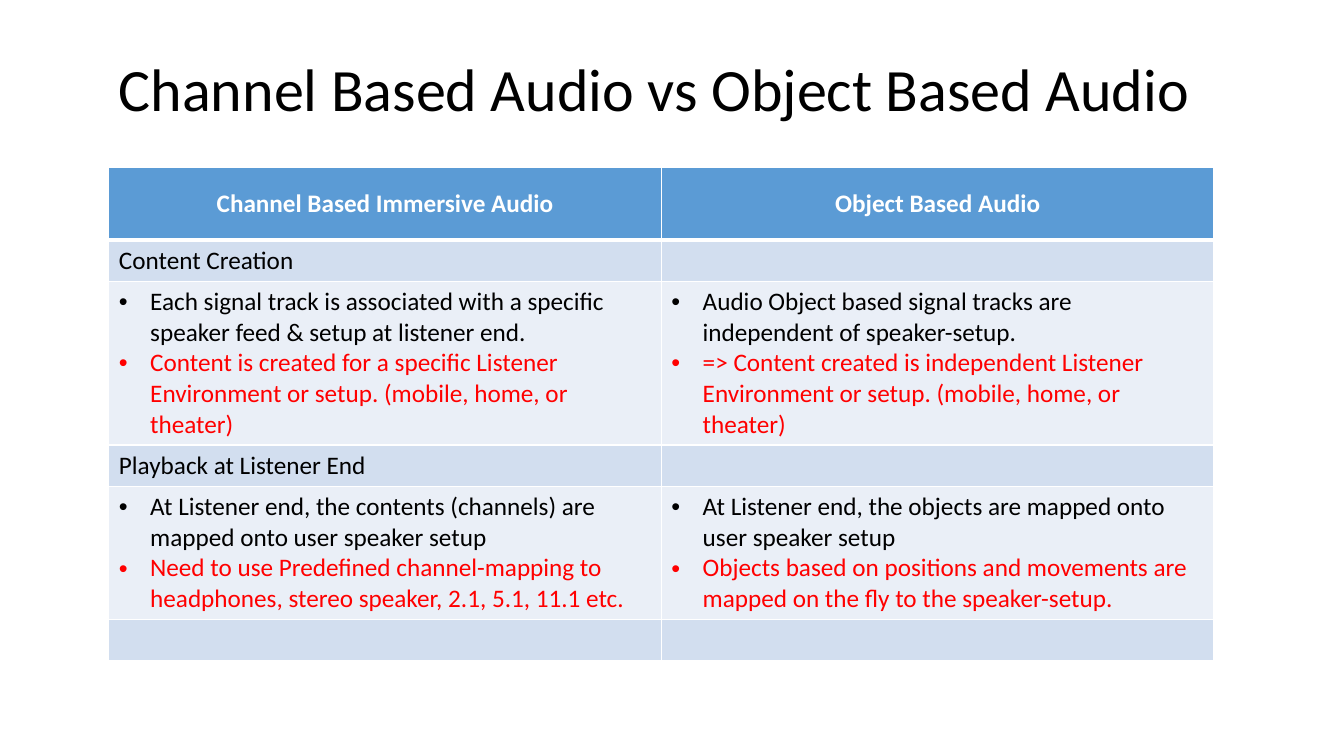
from lxml import etree
from pptx import Presentation
from pptx.dml.color import RGBColor
from pptx.enum.text import MSO_ANCHOR, PP_ALIGN
from pptx.oxml.ns import qn
from pptx.util import Inches, Pt

BLACK = RGBColor(0x00, 0x00, 0x00)
WHITE = RGBColor(0xFF, 0xFF, 0xFF)
RED = RGBColor(0xFF, 0x00, 0x00)
HEADER_BLUE = RGBColor(0x5B, 0x9B, 0xD5)
BAND_BLUE = RGBColor(0xD2, 0xDE, 0xEF)
PALE_BLUE = RGBColor(0xEA, 0xEF, 0xF7)
MIDDLE = MSO_ANCHOR.MIDDLE
CENTER = PP_ALIGN.CENTER
LEFT = PP_ALIGN.LEFT

SLIDE_WIDTH = 13.33
SLIDE_HEIGHT = 7.5
LEFT_MARGIN = 1.08 / SLIDE_WIDTH
HEADINGS = ["Channel Based Immersive Audio", "Object Based Audio"]
CREATION = [
    ["Each signal track is associated with a specific speaker feed & setup at listener end.",
     "Content is created for a specific Listener Environment or setup. (mobile, home, or theater)"],
    ["Audio Object based signal tracks are independent of speaker-setup.",
     "=> Content created is independent Listener Environment or setup. (mobile, home, or theater)"],
]
PLAYBACK = [
    ["At Listener end, the contents (channels) are mapped onto user speaker setup",
     "Need to use Predefined channel-mapping to headphones, stereo speaker, 2.1, 5.1, 11.1 etc."],
    ["At Listener end, the objects are mapped onto user speaker setup",
     "Objects based on positions and movements are mapped on the fly to the speaker-setup."],
]
ROWS = [
    ("header", 0.72, HEADINGS),
    ("band", 0.41, ["Content Creation", ""]),
    ("points", 1.62, CREATION),
    ("band", 0.41, ["Playback at Listener End", ""]),
    ("points", 1.32, PLAYBACK),
    ("band", 0.41, ["", ""]),
]
FILLS = {"header": HEADER_BLUE, "band": BAND_BLUE, "points": PALE_BLUE}


class SlideBuilder:
    """Holds the text style and the current slide, and places elements by shares of its size."""

    font_name = "Calibri"
    body_size = 18
    bullet_indent = 0.31

    def __init__(self, presentation):
        self.presentation = presentation
        self.slide = presentation.slides.add_slide(presentation.slide_layouts[6])

    def place(self, left, top, width, height):
        slide_width = self.presentation.slide_width
        slide_height = self.presentation.slide_height
        return (int(left * slide_width), int(top * slide_height),
                int(width * slide_width), int(height * slide_height))

    def style(self, paragraph, color, size=body_size, bold=False):
        for font in [paragraph.font] + [run.font for run in paragraph.runs]:
            font.name = self.font_name
            font.size = Pt(size)
            font.bold = bold
            font.color.rgb = color

    def title(self, text, size, *shares):
        shape = self.slide.shapes.add_textbox(*self.place(*shares))
        frame = shape.text_frame
        frame.word_wrap = True
        frame.vertical_anchor = MIDDLE
        frame.text = text
        paragraph = frame.paragraphs[0]
        paragraph.line_spacing = 0.8
        self.style(paragraph, BLACK, size)

    def bullet(self, paragraph):
        properties = paragraph._p.get_or_add_pPr()
        indent = Inches(self.bullet_indent)
        properties.set("marL", str(indent))
        properties.set("indent", str(-indent))
        etree.SubElement(properties, qn("a:buFont"), typeface="Arial")
        etree.SubElement(properties, qn("a:buChar"), char="•")

    def borders(self, cell, top, bottom):
        properties = cell._tc.get_or_add_tcPr()
        widths = [("a:lnL", 1), ("a:lnR", 1), ("a:lnT", top), ("a:lnB", bottom)]
        for position, (side, width) in enumerate(widths):
            line = etree.Element(qn(side), w=str(Pt(width)))
            fill = etree.SubElement(line, qn("a:solidFill"))
            etree.SubElement(fill, qn("a:srgbClr"), val=str(WHITE))
            properties.insert(position, line)

    def cell(self, cell, kind, content):
        cell.fill.solid()
        cell.fill.fore_color.rgb = FILLS[kind]
        cell.vertical_anchor = MIDDLE
        is_header = kind == "header"
        if kind == "points":
            cell.text_frame.text = "\n".join(content)
            for paragraph, color in zip(cell.text_frame.paragraphs, (BLACK, RED)):
                self.style(paragraph, color)
                self.bullet(paragraph)
        else:
            cell.text_frame.text = content
            paragraph = cell.text_frame.paragraphs[0]
            paragraph.alignment = CENTER if is_header else LEFT
            self.style(paragraph, WHITE if is_header else BLACK, bold=is_header)

    def table(self, rows, left, top, width):
        height = sum(row[1] for row in rows) / SLIDE_HEIGHT
        frame = self.slide.shapes.add_table(
            len(rows), len(HEADINGS), *self.place(left, top, width, height))
        table = frame.table
        table.horz_banding = False
        table.first_row = False
        for row_index, (kind, row_height, contents) in enumerate(rows):
            table.rows[row_index].height = Inches(row_height)
            for column_index, content in enumerate(contents):
                cell = table.cell(row_index, column_index)
                self.cell(cell, kind, content)
                self.borders(cell, 3 if row_index == 1 else 1, 3 if row_index == 0 else 1)


def main():
    presentation = Presentation()
    presentation.slide_width = Inches(SLIDE_WIDTH)
    presentation.slide_height = Inches(SLIDE_HEIGHT)
    builder = SlideBuilder(presentation)
    builder.table(ROWS, LEFT_MARGIN, 1.66 / SLIDE_HEIGHT, 10.96 / SLIDE_WIDTH)
    builder.title("Channel Based Audio vs Object Based Audio", 42.9,
                  LEFT_MARGIN, 0.57 / SLIDE_HEIGHT, 11.38 / SLIDE_WIDTH, 0.72 / SLIDE_HEIGHT)
    presentation.save("out.pptx")


if __name__ == "__main__":
    main()
